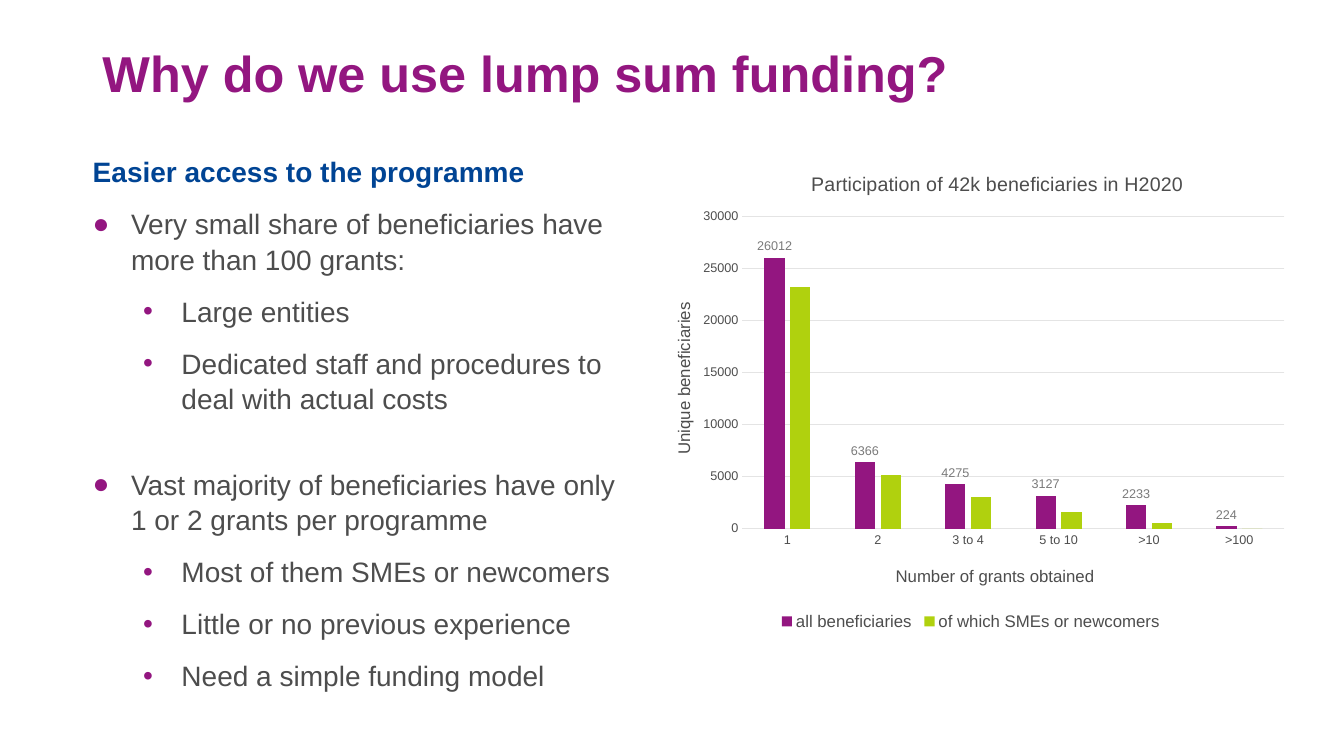
"""Build a slide on lump sum funding with a list and a column chart."""
from dataclasses import dataclass
from typing import Any

from lxml.etree import Element, SubElement
from pptx import Presentation
from pptx.chart.data import CategoryChartData
from pptx.dml.color import RGBColor
from pptx.enum.chart import XL_CHART_TYPE, XL_LABEL_POSITION, XL_LEGEND_POSITION, XL_TICK_MARK
from pptx.enum.text import MSO_ANCHOR, MSO_AUTO_SIZE, PP_ALIGN
from pptx.oxml.ns import qn
from pptx.util import Inches, Pt

WIDE, HIGH = Inches(13.33), Inches(7.5)
COLS, ROWS = 160, 90
PLUM, BLUE, LIME = "931680", "004494", "B0D10E"
DARK, GREY, PALE = "4D4D4D", "7A7A7A", "E4E4E4"


@dataclass
class Box:
    """Hold a place in grid columns and rows."""
    col: float
    row: float
    wide: float
    high: float

    def spot(self) -> tuple[int, int, int, int]:
        """Return the place in slide units."""
        return (int(self.col * WIDE / COLS), int(self.row * HIGH / ROWS),
                int(self.wide * WIDE / COLS), int(self.high * HIGH / ROWS))


@dataclass
class Kind:
    """Hold the look of a list line."""
    level: int
    mark: str = ""
    left: float = 0
    hang: float = 0
    ink: str = DARK
    bold: bool = False


@dataclass
class Line:
    """Hold one line of the list."""
    text: str
    kind: Kind
    lead: float = 0


@dataclass
class Row:
    """Hold one chart series."""
    name: str
    vals: tuple[int, ...]
    ink: str


HEAD = Kind(0, ink=BLUE, bold=True)
MAIN = Kind(0, "●", 0.38, -0.38)
SUB = Kind(1, "•", 0.88, -0.38)
LINES = [
    Line("Easier access to the programme", HEAD),
    Line("Very small share of beneficiaries have more than 100 grants:", MAIN),
    Line("Large entities", SUB),
    Line("Dedicated staff and procedures to deal with actual costs", SUB),
    Line("Vast majority of beneficiaries have only 1 or 2 grants per programme", MAIN, 24),
    Line("Most of them SMEs or newcomers", SUB),
    Line("Little or no previous experience", SUB),
    Line("Need a simple funding model", SUB),
]
CATS = ("1", "2", "3 to 4", "5 to 10", ">10", ">100")
DATA = [
    Row("all beneficiaries", (26012, 6366, 4275, 3127, 2233, 224), PLUM),
    Row("of which SMEs or newcomers", (23200, 5200, 3000, 1600, 500, 0), LIME),
]


def tint(code: str) -> RGBColor:
    """Turn a hex string into a colour."""
    return RGBColor.from_string(code)


def style(font: Any, size: float, ink: str, bold: bool = False) -> None:
    """Set the face, size, colour and weight of a font."""
    font.name, font.size, font.bold = "Arial", Pt(size), bold
    font.color.rgb = tint(ink)


def write(para: Any, text: str, size: float, ink: str, bold: bool = False) -> None:
    """Add a styled run to a paragraph."""
    run = para.add_run()
    run.text = text
    style(run.font, size, ink, bold)


def move(shape: Any, box: Box) -> None:
    """Put a shape at its place on the grid."""
    shape.left, shape.top, shape.width, shape.height = box.spot()


def mark(para: Any, kind: Kind) -> None:
    """Set the indent and bullet of a paragraph."""
    props = para._p.get_or_add_pPr()
    props.set("marL", str(Inches(kind.left)))
    props.set("indent", str(Inches(kind.hang)))
    if not kind.mark:
        SubElement(props, qn("a:buNone"))
        return
    SubElement(SubElement(props, qn("a:buClr")), qn("a:srgbClr"), val=PLUM)
    SubElement(props, qn("a:buFont"), typeface="Arial")
    SubElement(props, qn("a:buChar"), char=kind.mark)


def fill_list(shape: Any, lines: list[Line]) -> None:
    """Write the lines into the body."""
    frame = shape.text_frame
    frame.word_wrap, frame.auto_size = True, MSO_AUTO_SIZE.NONE
    for num, line in enumerate(lines):
        para = frame.add_paragraph() if num else frame.paragraphs[0]
        para.level, para.alignment = line.kind.level, PP_ALIGN.LEFT
        para.line_spacing = 1.05
        para.space_before, para.space_after = Pt(line.lead), Pt(12)
        mark(para, line.kind)
        write(para, line.text, 20, line.kind.ink, line.kind.bold)


def place(part: Any, slot: int, **shares: float) -> None:
    """Fix a chart part by shares of the chart's size."""
    for old in part.findall(qn("c:layout")):
        part.remove(old)
    lay = Element(qn("c:layout"))
    part.insert(slot, lay)
    hand = SubElement(lay, qn("c:manualLayout"))
    if slot == 0:
        SubElement(hand, qn("c:layoutTarget"), val="inner")
    for side in ("x", "y"):
        SubElement(hand, qn(f"c:{side}Mode"), val="edge")
    for side, share in shares.items():
        SubElement(hand, qn(f"c:{side}"), val=str(share))


def label(title: Any, text: str, size: float, x: float, y: float) -> None:
    """Write and place a chart or axis title."""
    write(title.text_frame.paragraphs[0], text, size, DARK)
    place(title._element, 1, x=x, y=y)


def trim(axis: Any) -> None:
    """Set the ticks and font of an axis."""
    axis.major_tick_mark = axis.minor_tick_mark = XL_TICK_MARK.NONE
    style(axis.tick_labels.font, 9, DARK)


def rule(line: Any) -> None:
    """Make a line thin and pale."""
    line.color.rgb, line.width = tint(PALE), Pt(0.75)


def draw_chart(slide: Any, box: Box) -> None:
    """Add the column chart."""
    data = CategoryChartData()
    data.categories = CATS
    for row in DATA:
        data.add_series(row.name, row.vals)
    chart = slide.shapes.add_chart(XL_CHART_TYPE.COLUMN_CLUSTERED, *box.spot(), data).chart
    style(chart.font, 10, DARK)
    chart.has_title = chart.has_legend = True
    label(chart.chart_title, "Participation of 42k beneficiaries in H2020", 14, 0.25, 0.04)

    base, side = chart.category_axis, chart.value_axis
    trim(base)
    trim(side)
    label(base.axis_title, "Number of grants obtained", 12, 0.38, 0.85)
    label(side.axis_title, "Unique beneficiaries", 12, 0.04, 0.31)
    rule(base.format.line)
    rule(side.major_gridlines.format.line)
    side.format.line.fill.background()
    side.minimum_scale, side.maximum_scale, side.major_unit = 0, 30000, 5000

    plot = chart.plots[0]
    plot.gap_width, plot.overlap, plot.vary_by_categories = 219, -27, False
    for bars, row in zip(plot.series, DATA):
        bars.format.fill.solid()
        bars.format.fill.fore_color.rgb = tint(row.ink)
    tags = plot.series[0].data_labels
    tags.show_value, tags.position = True, XL_LABEL_POSITION.OUTSIDE_END
    style(tags.font, 9, GREY)

    key = chart.legend
    key.position, key.include_in_layout = XL_LEGEND_POSITION.BOTTOM, False
    style(key.font, 12, DARK)
    place(key._element, 1, x=0.2, y=0.94, w=0.6, h=0.06)
    place(chart._chartSpace.chart.plotArea, 0, x=0.15, y=0.14, w=0.83, h=0.64)


def main() -> None:
    """Build and save the slide."""
    deck = Presentation()
    deck.slide_width, deck.slide_height = WIDE, HIGH
    slide = deck.slides.add_slide(deck.slide_layouts[1])
    head, body = slide.placeholders
    move(head, Box(11, 6.12, 138, 6.24))
    frame = head.text_frame
    frame.auto_size, frame.vertical_anchor = MSO_AUTO_SIZE.NONE, MSO_ANCHOR.BOTTOM
    frame.margin_bottom = 0
    para = frame.paragraphs[0]
    para.alignment, para.line_spacing = PP_ALIGN.LEFT, 0.9
    write(para, "Why do we use lump sum funding?", 36, PLUM, True)
    move(body, Box(9.84, 17.64, 65.77, 66))
    fill_list(body, LINES)
    draw_chart(slide, Box(76.7, 17.64, 77.78, 58.08))
    deck.save("out.pptx")


if __name__ == "__main__":
    main()
